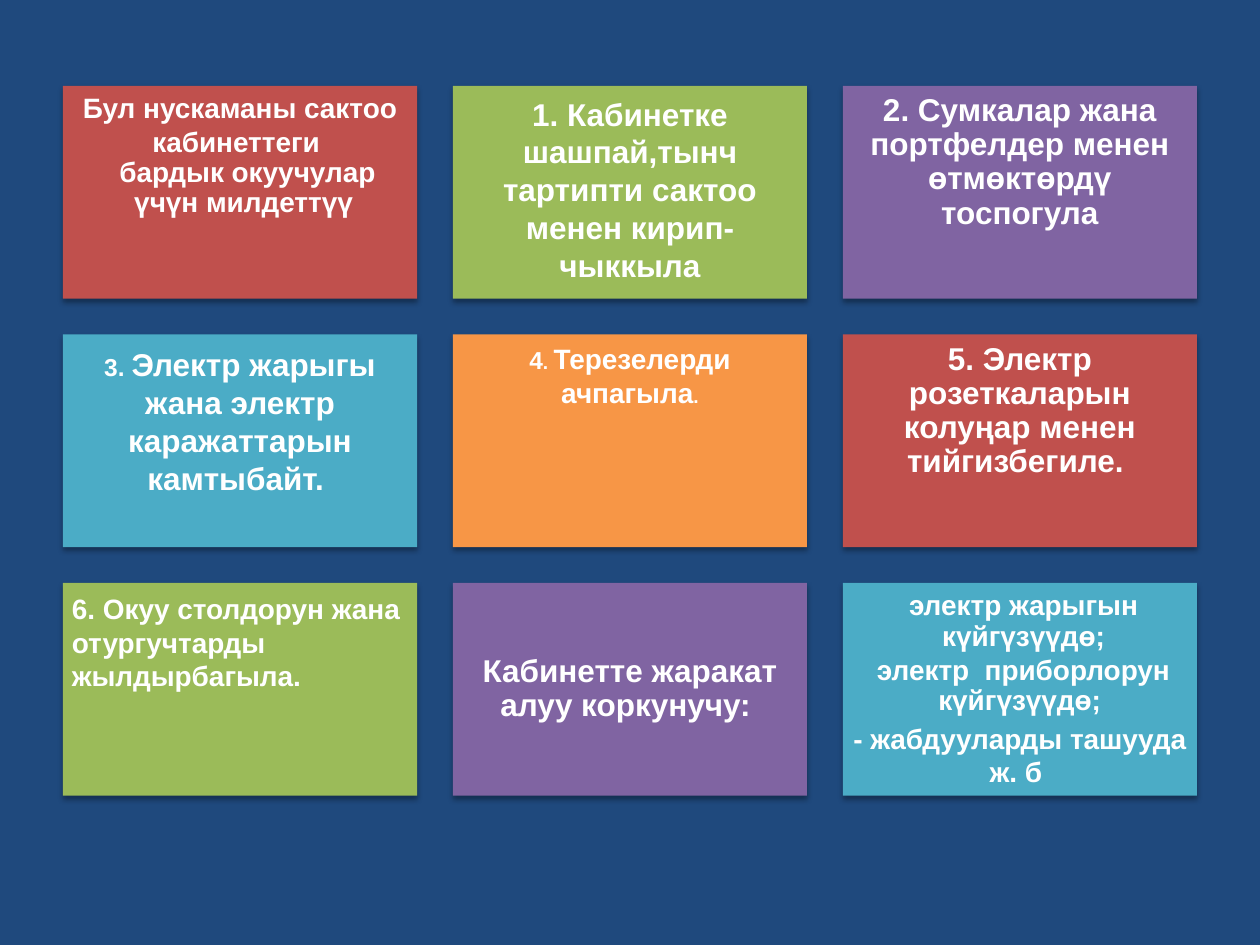
from dataclasses import dataclass

from lxml import etree
from pptx import Presentation
from pptx import util as u
from pptx.dml.color import RGBColor
from pptx.enum import shapes, text
from pptx.oxml import ns


@dataclass(frozen=True)
class Theme:
    """Colours, font and type sizes."""
    back: str = "1F497D"
    ink: str = "FFFFFF"
    shade: str = "000000"
    fills: tuple = ("C0504D", "9BBB59", "8064A2", "4BACC6", "F79646")
    font: str = "Arial"
    big: int = 18
    mid: int = 16
    small: int = 14
    tiny: int = 11


def write(para, parts, theme, size, align="CENTER", line=None, after=0, left=0):
    """Fill a paragraph with a string or with (string, size) parts."""
    para.alignment = getattr(text.PP_ALIGN, align)
    para.line_spacing = line
    para.space_after = u.Pt(after)
    if left:
        props = para._p.get_or_add_pPr()
        props.set("marL", str(u.Cm(left)))
        props.set("indent", "0")
    for words, points in [(parts, size)] if isinstance(parts, str) else parts:
        run = para.add_run()
        run.text = words
        run.font.name = theme.font
        run.font.size = u.Pt(points)
        run.font.bold = True
        run.font.color.rgb = RGBColor.from_string(theme.ink)


class Deck:
    """Theme and current slide, with one method for each element."""

    def __init__(self, theme):
        """Open a deck with one plain slide."""
        self.theme = theme
        self.file = Presentation()
        self.file.slide_width = u.Cm(25.4)
        self.file.slide_height = u.Cm(19.05)
        self.slide = self.file.slides.add_slide(self.file.slide_layouts[6])
        fill = self.slide.background.fill
        fill.solid()
        fill.fore_color.rgb = RGBColor.from_string(theme.back)

    def shadow(self, shape):
        """Cast a soft shadow straight down."""
        shape.shadow.inherit = False
        effects = shape._element.spPr.find(ns.qn("a:effectLst"))
        outer = etree.SubElement(
            effects, ns.qn("a:outerShdw"), blurRad=str(u.Pt(3.1)),
            dist=str(u.Pt(1.8)), dir="5400000", rotWithShape="0")
        color = etree.SubElement(outer, ns.qn("a:srgbClr"), val=self.theme.shade)
        etree.SubElement(color, ns.qn("a:alpha"), val="35000")

    def card(self, x, y, wide, high, fill, paras, size, anchor="TOP", pad=0.18, top=None):
        """Draw a coloured card with its paragraphs."""
        shape = self.slide.shapes.add_shape(
            shapes.MSO_SHAPE.RECTANGLE, u.Cm(x), u.Cm(y), u.Cm(wide), u.Cm(high))
        shape.fill.solid()
        shape.fill.fore_color.rgb = RGBColor.from_string(fill)
        shape.line.fill.background()
        self.shadow(shape)
        frame = shape.text_frame
        frame.word_wrap = True
        frame.vertical_anchor = getattr(text.MSO_ANCHOR, anchor)
        frame.margin_left = frame.margin_right = frame.margin_bottom = u.Cm(pad)
        frame.margin_top = u.Cm(pad if top is None else top)
        for i, (parts, style) in enumerate(paras):
            para = frame.add_paragraph() if i else frame.paragraphs[0]
            write(para, parts, self.theme, size, **style)

    def grid(self, cards, cols=3, x=1.27, y=1.73, wide=7.14, high=4.29, gap=0.72):
        """Lay the cards out in rows, cycling the fills."""
        fills = self.theme.fills
        for i, (paras, size, style) in enumerate(cards):
            row, col = divmod(i, cols)
            self.card(x + col * (wide + gap), y + row * (high + gap), wide, high,
                      fills[i % len(fills)], paras, size, **style)


def main():
    """Build and save the slide."""
    t = Theme()
    tight = {"line": 0.9}
    item = {"line": 0.9, "after": 2.4}
    cards = [
        ([("Бул нускаманы сактоо кабинеттеги ", {}),
          ("бардык окуучулар үчүн милдеттүү ", {**item, "left": 0.3})],
         t.mid, {"top": 0.1}),
        ([("1. Кабинетке шашпай,тынч тартипти сактоо менен кирип-чыккыла", {})],
         t.big, {}),
        ([("2. Сумкалар жана портфелдер менен өтмөктөрдү тоспогула", tight)],
         t.big, {}),
        ([([("3. ", t.small),
            ("Электр жарыгы жана электр каражаттарын камтыбайт. ", t.big)], {})],
         t.big, {"pad": 0.15, "top": 0.22}),
        ([([("4", t.small), (". ", t.tiny), ("Терезелерди ачпагыла", t.mid),
            (".", t.tiny)], {})],
         t.mid, {"pad": 0.15}),
        ([("5. Электр розеткаларын колуңар менен тийгизбегиле. ", tight)],
         t.big, {}),
        ([("6. Окуу столдорун жана отургучтарды жылдырбагыла.", {"align": "LEFT"})],
         t.mid, {}),
        ([("Кабинетте жаракат алуу коркунучу: ", tight)],
         t.big, {"anchor": "MIDDLE"}),
        ([("электр жарыгын күйгүзүүдө;", {**item, "left": 0.15}),
          ("электр  приборлорун күйгүзүүдө; ", {**item, "left": 0.15}),
          ("- жабдууларды ташууда ж. б ", {})],
         t.mid, {}),
    ]
    deck = Deck(t)
    deck.grid(cards)
    deck.file.save("out.pptx")


if __name__ == "__main__":
    main()
